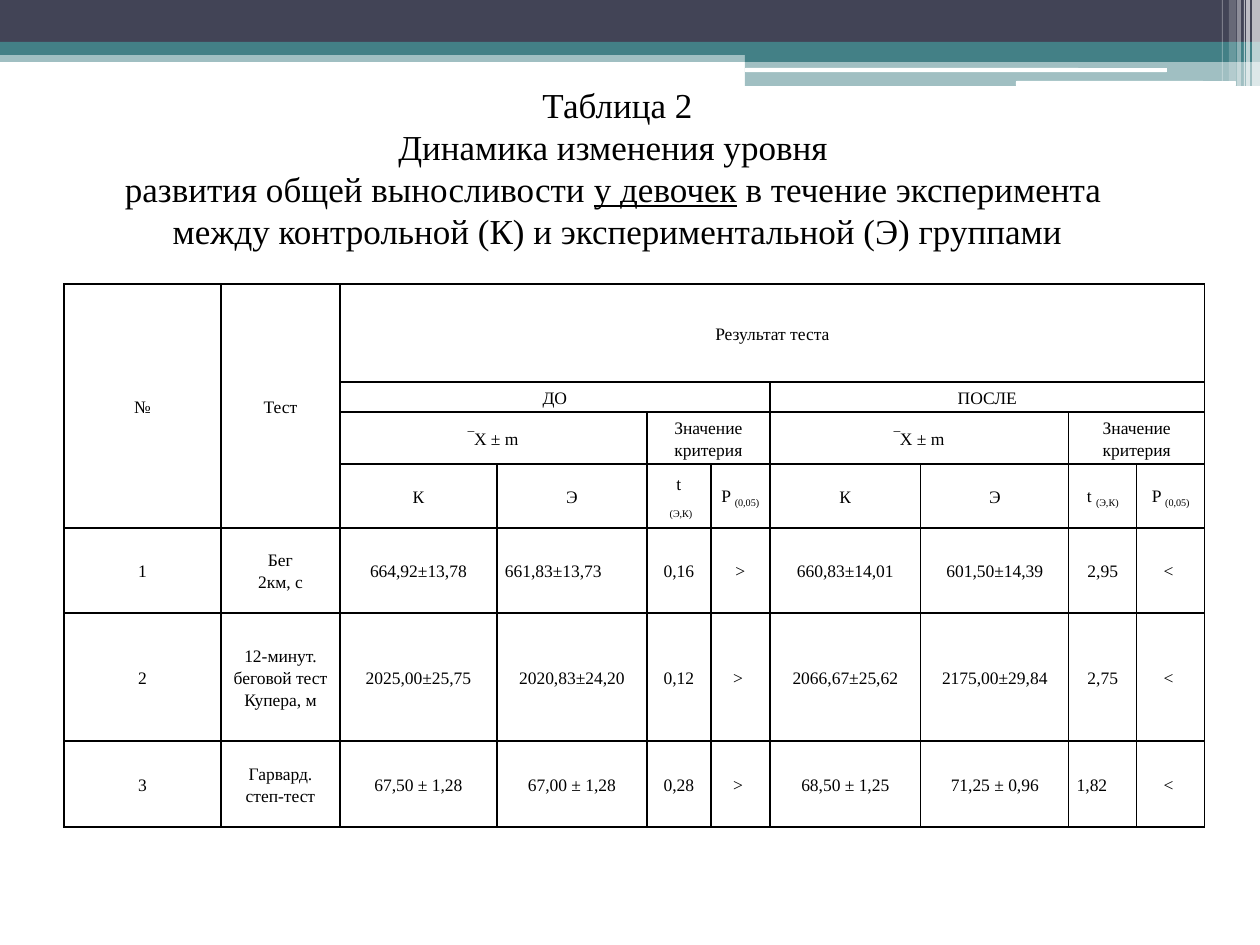
from dataclasses import dataclass

from lxml import etree
from pptx import Presentation
from pptx.dml.color import RGBColor
from pptx.enum.shapes import MSO_SHAPE
from pptx.enum.text import MSO_ANCHOR, MSO_AUTO_SIZE, PP_ALIGN
from pptx.oxml.ns import qn
from pptx.util import Pt

RECT, ROUND = MSO_SHAPE.RECTANGLE, MSO_SHAPE.ROUNDED_RECTANGLE
CENTER, LEFT = PP_ALIGN.CENTER, PP_ALIGN.LEFT
MIDDLE = MSO_ANCHOR.MIDDLE
NO_AUTOSIZE = MSO_AUTO_SIZE.NONE
TITLE_ONLY = 5
EMU_PER_PX = 914400 / 126


def px(n):
    return round(n * EMU_PER_PX)


@dataclass(frozen=True)
class Theme:
    font: str = "Times New Roman"
    ink: str = "000000"
    dark: str = "424456"
    teal: str = "438086"
    white: str = "FFFFFF"
    title_size: int = 20
    cell_size: int = 10
    border: int = 1


class Deck:
    def __init__(self, theme, width, height):
        self.theme = theme
        self.prs = Presentation()
        self.prs.slide_width, self.prs.slide_height = px(width), px(height)
        self.slide = self.prs.slides.add_slide(self.prs.slide_layouts[TITLE_ONLY])

    def bar(self, box, color, alpha=100, shape=RECT):
        sp = self.slide.shapes.add_shape(shape, *map(px, box))
        sp.shadow.inherit = False
        sp.line.fill.background()
        sp.fill.solid()
        sp.fill.fore_color.rgb = RGBColor.from_string(color)
        if alpha < 100:
            clr = sp._element.spPr.find(qn("a:solidFill"))[0]
            etree.SubElement(clr, qn("a:alpha"), val=str(alpha * 1000))

    def add_text(self, tf, text, size, mark, align=CENTER):
        """One paragraph per line; mark() formats each run between underscores."""
        for i, line in enumerate(text.split("\n")):
            p = tf.paragraphs[0] if i == 0 else tf.add_paragraph()
            p.alignment = align
            for j, part in enumerate(line.split("_")):
                if not part:
                    continue
                r = p.add_run()
                r.text = part
                r.font.name, r.font.size = self.theme.font, Pt(size)
                r.font.color.rgb = RGBColor.from_string(self.theme.ink)
                if j % 2:
                    mark(r)

    def title(self, box, text, indent):
        sp = self.slide.shapes.title
        sp.left, sp.top, sp.width, sp.height = map(px, box)
        tf = sp.text_frame
        tf.word_wrap, tf.auto_size, tf.vertical_anchor = True, NO_AUTOSIZE, MIDDLE
        self.add_text(tf, text, self.theme.title_size, underline)
        for p in tf.paragraphs:
            p._p.get_or_add_pPr().set("indent", str(px(indent)))

    def table(self, left, top, cols, rows, texts, spans, left_aligned):
        table = self.slide.shapes.add_table(
            len(rows), len(cols), px(left), px(top), px(sum(cols)), px(sum(rows))).table
        table.first_row = table.horz_banding = False
        for col, width in zip(table.columns, cols):
            col.width = px(width)
        for row, height in zip(table.rows, rows):
            row.height = px(height)
        for (r, c), (down, across) in spans.items():
            table.cell(r, c).merge(table.cell(r + down - 1, c + across - 1))
        for r in range(len(rows)):
            for c in range(len(cols)):
                align = LEFT if (r, c) in left_aligned else CENTER
                self.cell(table.cell(r, c), texts.get((r, c)), align)

    def cell(self, cell, text, align):
        cell.fill.background()
        self.borders(cell)
        cell.vertical_anchor = MIDDLE
        cell.margin_left = cell.margin_right = px(8)
        cell.margin_top = cell.margin_bottom = 0
        if text:
            self.add_text(cell.text_frame, text, self.theme.cell_size, subscript, align)
            for p in cell.text_frame.paragraphs:
                p.line_spacing = 1.15

    def borders(self, cell):
        tcPr = cell._tc.get_or_add_tcPr()
        for i, side in enumerate(("lnL", "lnR", "lnT", "lnB")):
            ln = etree.Element(qn("a:" + side), w=str(Pt(self.theme.border)))
            fill = etree.SubElement(ln, qn("a:solidFill"))
            etree.SubElement(fill, qn("a:srgbClr"), val=self.theme.ink)
            tcPr.insert(i, ln)


def underline(r):
    r.font.underline = True


def subscript(r):
    r._r.get_or_add_rPr().set("baseline", "-25000")


TITLE = """Таблица 2
Динамика изменения уровня 
развития общей выносливости _у девочек_ в течение эксперимента 
между контрольной (К) и экспериментальной (Э) группами"""

COLS = [157, 119, 157, 150, 64, 59, 151, 148, 68, 68]
ROWS = [98, 30, 52, 0, 64, 85, 128, 86]

RESULTS = [
    ["1", "Бег\n2км, с", "664,92±13,78", "661,83±13,73", "0,16", ">",
     "660,83±14,01", "601,50±14,39", "2,95", "< "],
    ["2", "12-минут. беговой тест Купера, м", "2025,00±25,75", "2020,83±24,20", "0,12", "> ",
     "2066,67±25,62", "2175,00±29,84", "2,75", "< "],
    ["3", "Гарвард. степ-тест", "67,50 ± 1,28", "67,00 ± 1,28", "0,28", "> ",
     "68,50 ± 1,25", "71,25 ± 0,96", "1,82", "< "],
]
FIRST_RESULT = 5


def header():
    """Texts and spans of the header rows, keyed by (row, column)."""
    texts = {(0, 0): "№", (0, 1): "Тест", (0, 2): "Результат теста"}
    spans = {(0, 0): (5, 1), (0, 1): (5, 1), (0, 2): (1, 8)}
    for c, stage, t in ((2, "ДО", "t\n _(Э,К)"), (6, "ПОСЛЕ", "t _(Э,К)")):
        texts.update({(1, c): stage, (2, c): "‾Х ± m", (2, c + 2): "Значение критерия",
                      (3, c + 2): t, (3, c + 3): "P _(0,05)",
                      (4, c): "К", (4, c + 1): "Э"})
        spans.update({(1, c): (1, 4), (2, c): (2, 2), (2, c + 2): (1, 2),
                      (3, c + 2): (2, 1), (3, c + 3): (2, 1)})
    return texts, spans


def main():
    theme = Theme()
    deck = Deck(theme, 1260, 945)

    # Banner across the top
    deck.bar((0, 50, 1260, 12), theme.teal, 50)
    deck.bar((0, 0, 1260, 43), theme.dark)
    deck.bar((0, 42, 1260, 13), theme.teal)
    deck.bar((745, 49, 515, 13), theme.teal)
    deck.bar((745, 62, 515, 24), theme.teal, 50)
    deck.bar((745, 68, 422, 4), theme.white, shape=ROUND)
    deck.bar((1016, 81, 220, 5), theme.white, shape=ROUND)

    # Pale stripes in the right corner
    for x, width, height, alpha in ((1252, 8, 86, 65), (1246, 4, 86, 65), (1244, 1, 86, 60),
                                    (1237, 4, 86, 40), (1229, 7, 81, 20), (1222, 1, 81, 30)):
        deck.bar((x, 0, width, height), theme.white, alpha)

    # Title
    deck.title((44, 76, 1084, 183), TITLE, 63)

    # Results table
    texts, spans = header()
    for r, row in enumerate(RESULTS, FIRST_RESULT):
        texts.update({(r, c): text for c, text in enumerate(row)})
    deck.table(64, 284, COLS, ROWS, texts, spans, left_aligned={(5, 3), (7, 8)})

    deck.prs.save("out.pptx")


if __name__ == "__main__":
    main()
